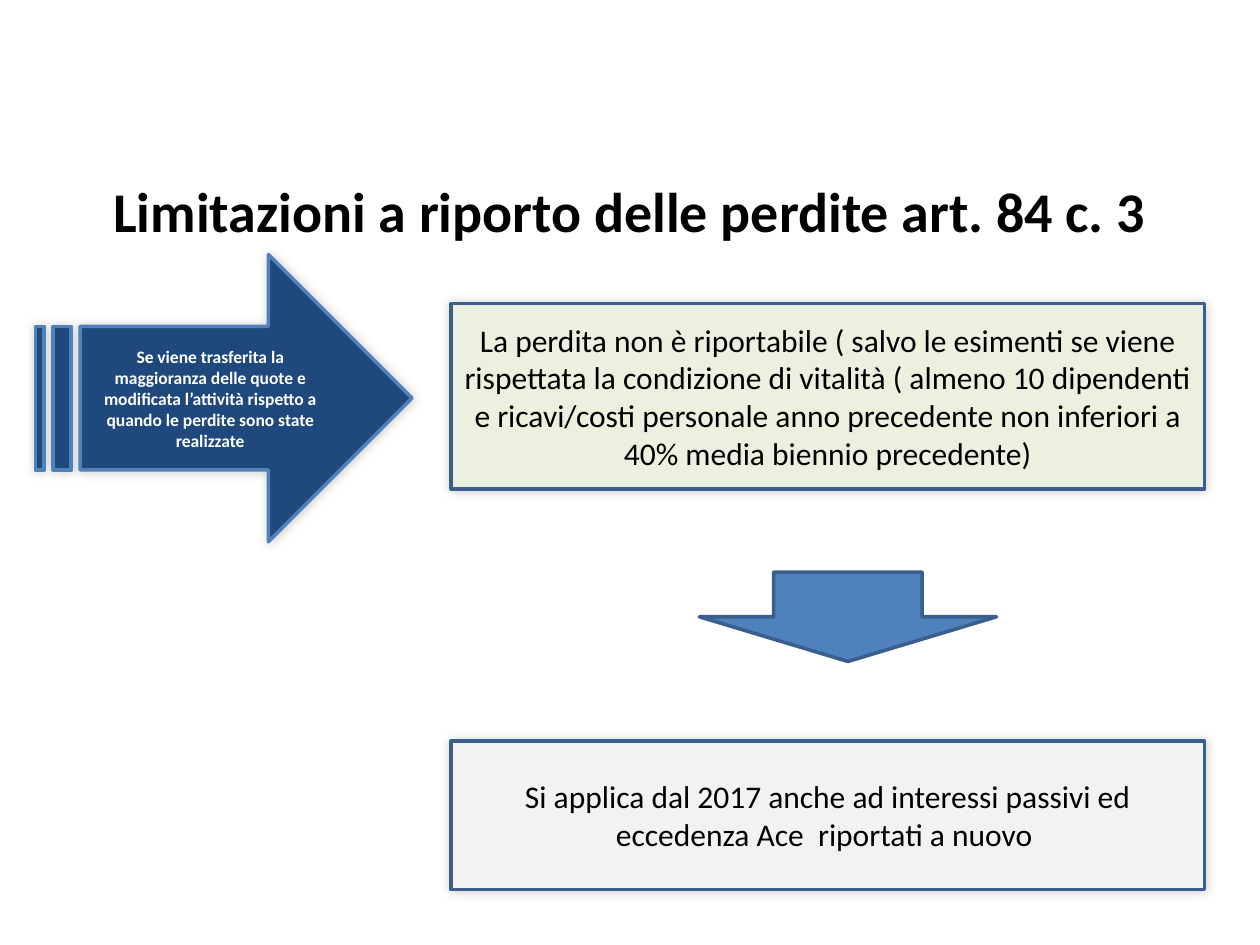
from dataclasses import dataclass

import lxml.etree
import pptx
import pptx.dml.color
import pptx.enum.shapes
import pptx.enum.text
import pptx.oxml.ns
import pptx.util

SHAPES = pptx.enum.shapes.MSO_SHAPE
WIDTH, HEIGHT = 10, 7.5


@dataclass(frozen=True)
class Theme:
    font: str = "Calibri"
    ink: str = "000000"
    white: str = "FFFFFF"
    navy: str = "1F497D"
    blue: str = "4F81BD"
    edge: str = "3A5F8C"
    green: str = "EBF1DE"
    grey: str = "F2F2F2"
    title_size: int = 32
    body_size: int = 18
    cause_size: int = 10
    line_width: int = 2
    shadow_blur: int = 6
    shadow_opacity: int = 20


THEME = Theme()


def rgb(value):
    return pptx.dml.color.RGBColor.from_string(value)


def inches(box):
    return [pptx.util.Inches(length) for length in box]


def write(shape, text, size, color, bold=False):
    frame = shape.text_frame
    frame.word_wrap = True
    frame.vertical_anchor = pptx.enum.text.MSO_ANCHOR.MIDDLE
    para = frame.paragraphs[0]
    para.alignment = pptx.enum.text.PP_ALIGN.CENTER
    span = para.add_run()
    span.text = text
    span.font.name = THEME.font
    span.font.size = pptx.util.Pt(size)
    span.font.bold = bold
    span.font.color.rgb = rgb(color)


def add_soft_shadow(shape):
    """Fill the shape's effect list with a faint blurred shadow."""
    qn = pptx.oxml.ns.qn
    effects = shape.element.spPr.find(qn("a:effectLst"))
    shadow = lxml.etree.SubElement(
        effects, qn("a:outerShdw"),
        blurRad=str(pptx.util.Pt(THEME.shadow_blur)),
        dist="0", dir=str(225 * 60000), rotWithShape="0")
    color = lxml.etree.SubElement(shadow, qn("a:srgbClr"), val=THEME.ink)
    lxml.etree.SubElement(
        color, qn("a:alpha"), val=str(THEME.shadow_opacity * 1000))


def add_block(page, kind, box, fill, edge):
    shape = page.shapes.add_shape(kind, *inches(box))
    shape.shadow.inherit = False
    shape.fill.solid()
    shape.fill.fore_color.rgb = rgb(fill)
    shape.line.color.rgb = rgb(edge)
    shape.line.width = pptx.util.Pt(THEME.line_width)
    return shape


def add_title(page, box, text):
    title = page.shapes.add_textbox(*inches(box))
    write(title, text, THEME.title_size, THEME.ink, bold=True)


def add_cause_arrow(page, box, text):
    arrow = add_block(page, SHAPES.STRIPED_RIGHT_ARROW, box,
                      THEME.navy, THEME.blue)
    add_soft_shadow(arrow)
    write(arrow, text, THEME.cause_size, THEME.white, bold=True)


def add_rule_panel(page, box, fill, text):
    panel = add_block(page, SHAPES.RECTANGLE, box, fill, THEME.edge)
    add_soft_shadow(panel)
    write(panel, text, THEME.body_size, THEME.ink)


def add_down_arrow(page, box):
    add_block(page, SHAPES.DOWN_ARROW, box, THEME.blue, THEME.edge)


def main():
    deck = pptx.Presentation()
    deck.slide_width, deck.slide_height = inches((WIDTH, HEIGHT))
    page = deck.slides.add_slide(deck.slide_layouts[6])

    panel_left, panel_width = 0.358 * WIDTH, 0.598 * WIDTH
    add_title(page, (0, 1.32, WIDTH, 0.69),
              "Limitazioni a riporto delle perdite art. 84 c. 3")
    add_rule_panel(
        page, (panel_left, 2.41, panel_width, 1.47), THEME.green,
        "La perdita non è riportabile ( salvo le esimenti se viene "
        "rispettata la condizione di vitalità ( almeno 10 dipendenti e "
        "ricavi/costi personale anno precedente non inferiori a 40% media "
        "biennio precedente)")
    add_cause_arrow(
        page, (0.28, 2.02, 2.99, 2.28),
        "Se viene trasferita la maggioranza delle quote e modificata "
        "l’attività rispetto a quando le perdite sono state realizzate")
    add_rule_panel(
        page, (panel_left, 5.88, panel_width, 1.18), THEME.grey,
        "Si applica dal 2017 anche ad interessi passivi ed eccedenza Ace  "
        "riportati a nuovo ")
    add_down_arrow(page, (5.55, 4.54, 2.36, 0.71))

    deck.save("out.pptx")


if __name__ == "__main__":
    main()
